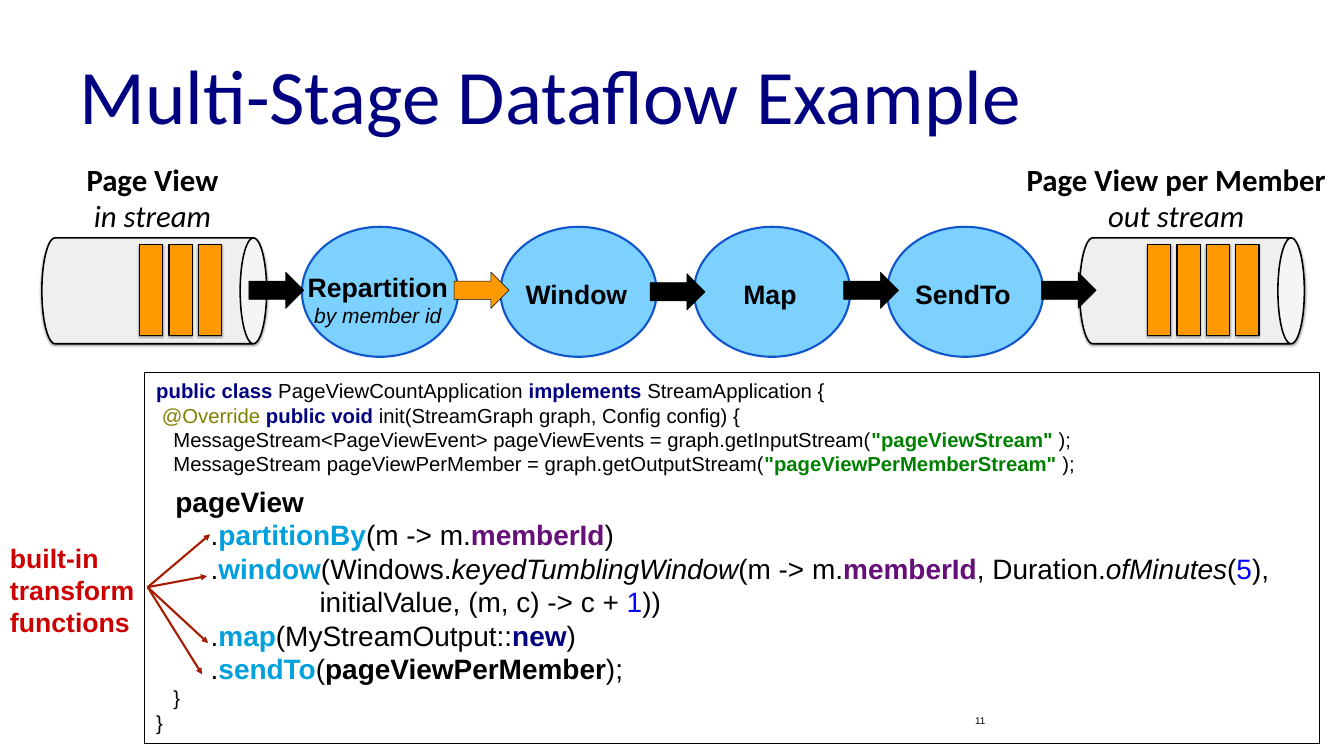
from lxml.etree import SubElement
from pptx import Presentation
from pptx.dml.color import RGBColor
from pptx.enum.shapes import MSO_CONNECTOR, MSO_SHAPE
from pptx.enum.text import MSO_ANCHOR, PP_ALIGN
from pptx.oxml import parse_xml
from pptx.oxml.ns import nsdecls, qn
from pptx.util import Inches, Pt

COLORS = {
    "black": "000000", "navy": "000080", "pipe": "EFEFEF", "orange": "FF9900",
    "stage": "33B8FF", "stage_edge": "1155CC", "red": "CC0000", "rust": "A61C00",
    "olive": "808000", "green": "008000", "cyan": "00A0DC", "purple": "660E7A",
    "blue": "0000FF",
}
# Text style: colour, bold, italic
STYLES = {
    "plain": ("black", False, False), "bold": ("black", True, False),
    "italic": ("black", False, True), "title": ("navy", False, False),
    "keyword": ("navy", True, False), "note": ("olive", False, False),
    "string": ("green", True, False), "call": ("cyan", True, False),
    "field": ("purple", True, False), "number": ("blue", False, False),
    "callout": ("red", True, False),
}
SHADOW = (
    f'<a:effectLst {nsdecls("a")}><a:outerShdw blurRad="39400" dist="22900" dir="5400000" '
    'rotWithShape="0"><a:srgbClr val="000000"><a:alpha val="35000"/></a:srgbClr>'
    '</a:outerShdw></a:effectLst>'
)

deck = Presentation()
deck.slide_width, deck.slide_height = Inches(26.67), Inches(15)
page = deck.slides.add_slide(deck.slide_layouts[5])
# Grid of 80 columns by 45 rows
COL, ROW = deck.slide_width / 80, deck.slide_height / 45


def place(kind, col, row, cols, rows, fill=None, line="black", weight=0.75, shadow=False):
    """Add a preset shape, or a text box when kind is None, on the grid."""
    area = [int(n) for n in (col * COL, row * ROW, cols * COL, rows * ROW)]
    if kind is None:
        return page.shapes.add_textbox(*area)
    shape = page.shapes.add_shape(kind, *area)
    shape.shadow.inherit = False
    if shadow:
        properties = shape._element.spPr
        properties.replace(properties.find(qn("a:effectLst")), parse_xml(SHADOW))
    if fill:
        shape.fill.solid()
        shape.fill.fore_color.rgb = RGBColor.from_string(COLORS[fill])
    else:
        shape.fill.background()
    shape.line.color.rgb = RGBColor.from_string(COLORS[line])
    shape.line.width = Pt(weight)
    return shape


def write(box, lines, font="Arial", align=PP_ALIGN.LEFT, anchor=MSO_ANCHOR.TOP, inset=(0.24, 0.12)):
    """Write lines of (size, indent in inches, space before, [(text, style)])."""
    frame = box.text_frame
    frame.word_wrap = True
    frame.vertical_anchor = anchor
    frame.margin_left = frame.margin_right = Inches(inset[0])
    frame.margin_top = frame.margin_bottom = Inches(inset[1])
    for index, (size, indent, before, spans) in enumerate(lines):
        para = frame.add_paragraph() if index else frame.paragraphs[0]
        para.alignment = align
        para.space_before = Pt(before)
        para._p.get_or_add_pPr().set("marL", str(Inches(indent)))
        for text, style in spans:
            span = para.add_run()
            span.text = text
            color, span.font.bold, span.font.italic = STYLES[style]
            span.font.name, span.font.size = font, Pt(size)
            span.font.color.rgb = RGBColor.from_string(COLORS[color])


# Title and page number
title = page.shapes.title
title.left, title.top = int(4 * COL), int(1.8 * ROW)
title.width, title.height = int(72 * COL), int(7.5 * ROW)
write(title, [(110, 0, 0, [("Multi-Stage Dataflow Example", "title")])],
      font="Calibri", anchor=MSO_ANCHOR.MIDDLE)
write(place(None, 57.33, 41.7, 18.66, 2.4), [(14, 0, 0, [("11", "plain")])],
      anchor=MSO_ANCHOR.MIDDLE)

# Input and output streams: pipe, label, message bars
streams = [
    (6.03, 3.06, 12.03, "Page View", "in stream", 8.31, 3),
    (67.8, 59.52, 21, "Page View per Member", "out stream", 68.31, 4),
]
for pipe_col, label_col, label_cols, name, role, bar_col, bars in streams:
    pipe = place(MSO_SHAPE.CAN, pipe_col, 10.62, 6.3, 13.38, "pipe", weight=2.25, shadow=True)
    pipe.rotation = 90
    pipe.adjustments[0] = 0.25
    write(place(None, label_col, 9.18, label_cols, 4.62),
          [(44, 0, 0, [(name, "bold")]), (44, 0, 0, [(role, "italic")])],
          font="Calibri", align=PP_ALIGN.CENTER)
    for bar in range(bars):
        place(MSO_SHAPE.RECTANGLE, bar_col + 1.75 * bar, 14.55, 1.38, 5.43,
              "orange", weight=1.5, shadow=True)

# Processing stages
stages = [(17.97, "Repartition", "by member id"), (29.79, "Window", None),
          (41.31, "Map", None), (52.8, "SendTo", None)]
for col, name, detail in stages:
    stage = place(MSO_SHAPE.OVAL, col, 13.5, 9.3, 7.74, "stage", "stage_edge", 3)
    tint = stage._element.spPr.find(qn("a:solidFill"))[0]
    SubElement(tint, qn("a:alpha")).set("val", "64000")
    lines = [(38, 0, 0, [(name, "bold")])]
    if detail:
        lines.append((30, 0, 0, [(detail, "italic")]))
    write(place(None, col - 0.49, 15.81 if detail else 16.26, 10.02, 3.24), lines,
          align=PP_ALIGN.CENTER, inset=(0.1, 0.1))

# Arrows between stages
for col, row, fill in [(14.82, 16.2, "black"), (27.03, 16.2, "orange"), (38.7, 16.29, "black"),
                       (50.22, 16.2, "black"), (61.98, 16.2, "black")]:
    place(MSO_SHAPE.RIGHT_ARROW, col, row, 3.27, 2.16, fill)

# Code listing
SMALL, LARGE = 29, 40
STEP, CALL, WRAPPED = 0.34, 1.08, 3.24
code = [
    (SMALL, 0, 0, [("public class ", "keyword"), ("PageViewCountApplication ", "plain"),
                   ("implements ", "keyword"), ("StreamApplication {", "plain")]),
    (SMALL, 0.11, 0, [("@Override ", "note"), ("public void ", "keyword"),
                      ("init(StreamGraph graph, Config config) {", "plain")]),
    (SMALL, STEP, 0, [("MessageStream<PageViewEvent> pageViewEvents = graph.getInputStream(", "plain"),
                      ('"pageViewStream"', "string"), (" );", "plain")]),
    (SMALL, STEP, 0, [("MessageStream pageViewPerMember = graph.getOutputStream(", "plain"),
                      ('"pageViewPerMemberStream"', "string"), (" );", "plain")]),
    (LARGE, 0.38, 11.5, [("pageView", "bold")]),
    (LARGE, CALL, 0, [(".", "plain"), ("partitionBy", "call"), ("(m -> m.", "plain"),
                      ("memberId", "field"), (")", "plain")]),
    (LARGE, CALL, 0, [(".", "plain"), ("window", "call"), ("(Windows.", "plain"),
                      ("keyedTumblingWindow", "italic"), ("(m -> m.", "plain"),
                      ("memberId", "field"), (", Duration.", "plain"), ("ofMinutes", "italic"),
                      ("(", "plain"), ("5", "number"), ("),", "plain")]),
    (LARGE, WRAPPED, 0, [("initialValue, (m, c) -> c + ", "plain"), ("1", "number"), ("))", "plain")]),
    (LARGE, CALL, 0, [(".", "plain"), ("map", "call"), ("(MyStreamOutput::", "plain"),
                      ("new", "keyword"), (")", "plain")]),
    (LARGE, CALL, 0, [(".", "plain"), ("sendTo", "call"), ("(", "plain"),
                      ("pageViewPerMember", "bold"), (");", "plain")]),
    (SMALL, STEP, 0, [("}", "plain")]),
    (SMALL, 0, 0, [("}", "plain")]),
]
write(place(MSO_SHAPE.RECTANGLE, 8.58, 22.17, 69.93, 22.08), code)

# Callout with arrows to the transform calls
write(place(None, 0.3, 31.95, 8.49, 6),
      [(38, 0, 0, [("built-in transform functions", "callout")])], inset=(0.1, 0.1))
for col, row in [(12.51, 31.8), (12.33, 34.29), (12.39, 38.28), (12.03, 40.14)]:
    pointer = page.shapes.add_connector(
        MSO_CONNECTOR.STRAIGHT, int(8.79 * COL), int(34.95 * ROW), int(col * COL), int(row * ROW))
    pointer.line.color.rgb = RGBColor.from_string(COLORS["rust"])
    pointer.line.width = Pt(3)
    SubElement(pointer.line._get_or_add_ln(), qn("a:tailEnd")).set("type", "triangle")
    SubElement(pointer._element.spPr, qn("a:effectLst"))

deck.save("out.pptx")
